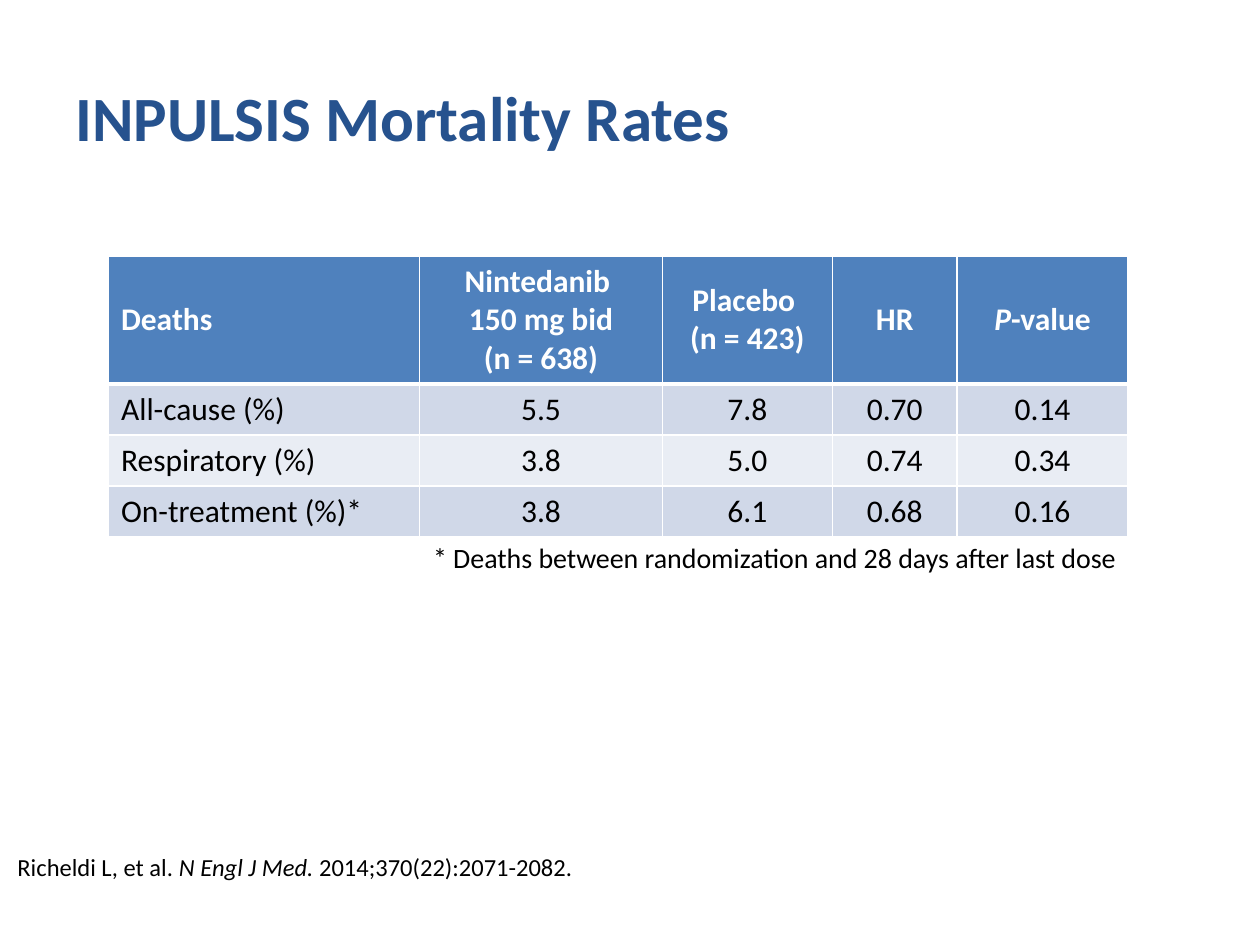
"""Build the INPULSIS mortality rates slide."""
from lxml import etree
from pptx import Presentation
from pptx.dml.color import RGBColor
from pptx.enum.text import MSO_ANCHOR, PP_ALIGN
from pptx.oxml.ns import qn
from pptx.util import Pt

LEFT, MID, RIGHT = PP_ALIGN.LEFT, PP_ALIGN.CENTER, PP_ALIGN.RIGHT
MIDDLE = MSO_ANCHOR.MIDDLE


def style(para, parts, size, color, align=LEFT, bold=False):
    para.alignment = align
    for text, slant in parts:
        run = para.add_run()
        run.text = text
        font = run.font
        font.name, font.size = "Calibri", Pt(size)
        font.bold, font.italic = bold, slant
        font.color.rgb = RGBColor.from_string(color)


def edge(cell, side, width):
    line = etree.SubElement(cell._tc.get_or_add_tcPr(), qn("a:ln" + side), w=str(Pt(width)))
    fill = etree.SubElement(line, qn("a:solidFill"))
    etree.SubElement(fill, qn("a:srgbClr"), val="FFFFFF")


prs = Presentation()
prs.slide_width, prs.slide_height = Pt(720), Pt(540)
slide = prs.slides.add_slide(prs.slide_layouts[5])

title = slide.shapes.title
title.left, title.top, title.width, title.height = Pt(36), Pt(21.6), Pt(648), Pt(90)
title.text_frame.vertical_anchor = MIDDLE
style(title.text_frame.paragraphs[0], [("INPULSIS Mortality Rates", False)], 36, "26528E", bold=True)

rows = [
    ["Deaths", "Nintedanib \n150 mg bid\n(n = 638)", "Placebo \n(n = 423)", "HR", "P-value"],
    ["All-cause (%)", "5.5", "7.8", "0.70", "0.14"],
    ["Respiratory (%)", "3.8", "5.0", "0.74", "0.34"],
    ["On-treatment (%)*", "3.8", "6.1", "0.68", "0.16"],
]
widths = [177.8, 138.7, 97.2, 71.2, 97.8]
heights = [71.6, 29.2, 29.2, 29.2]
fills = ["4F81BD", "D0D8E8", "E9EDF4", "D0D8E8"]

table = slide.shapes.add_table(
    len(rows), len(widths), Pt(62), Pt(146.2), Pt(sum(widths)), Pt(sum(heights))
).table
for col, width in zip(table.columns, widths):
    col.width = Pt(width)
for r, row in enumerate(rows):
    table.rows[r].height = Pt(heights[r])
    head = r == 0
    for c, text in enumerate(row):
        cell = table.cell(r, c)
        cell.vertical_anchor = MIDDLE
        for side, width in [("L", 1), ("R", 1), ("T", 3 if r == 1 else 1), ("B", 3 if head else 1)]:
            edge(cell, side, width)
        cell.fill.solid()
        cell.fill.fore_color.rgb = RGBColor.from_string(fills[r])
        for n, line in enumerate(text.split("\n")):
            frame = cell.text_frame
            para = frame.add_paragraph() if n else frame.paragraphs[0]
            parts = [("P", True), ("-value", False)] if line == "P-value" else [(line, False)]
            style(para, parts, 18, "FFFFFF" if head else "000000", MID if c else LEFT, head)

cite = [("Richeldi L, et al. ", False), ("N Engl J Med. ", True), ("2014;370(22):2071-2082.", False)]
note = [("* Deaths between randomization and 28 days after last dose", False)]
for x, y, w, h, parts, size, align in [
    (2.9, 483.1, 334.8, 24.5, cite, 14, LEFT),
    (234.7, 305.3, 410.4, 26.6, note, 16, RIGHT),
]:
    box = slide.shapes.add_textbox(Pt(x), Pt(y), Pt(w), Pt(h))
    box.text_frame.word_wrap = False
    style(box.text_frame.paragraphs[0], parts, size, "000000", align)

prs.save("out.pptx")
